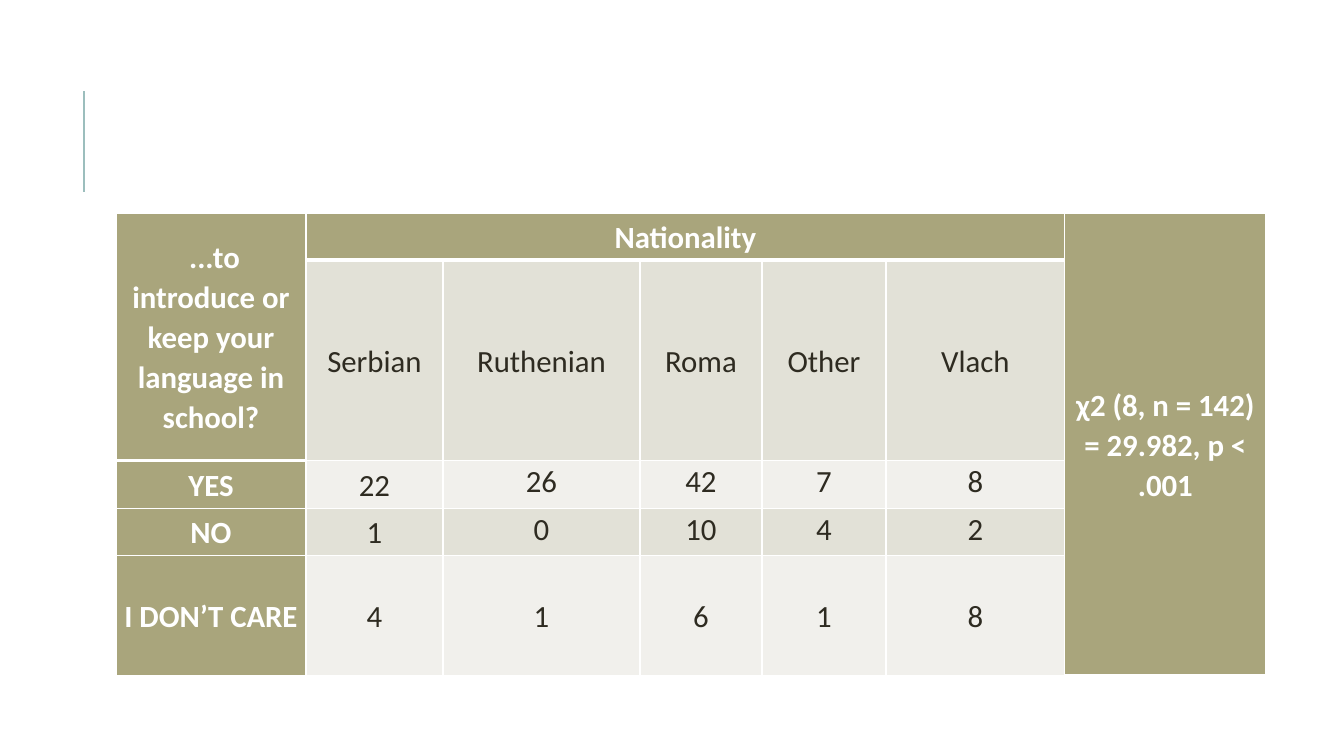
from lxml import etree
from pptx import Presentation
from pptx.dml.color import RGBColor
from pptx.enum.shapes import MSO_CONNECTOR
from pptx.enum.text import MSO_ANCHOR, PP_ALIGN
from pptx.oxml.ns import qn
from pptx.util import Pt

STRAIGHT = MSO_CONNECTOR.STRAIGHT
TOP, MIDDLE = MSO_ANCHOR.TOP, MSO_ANCHOR.MIDDLE
CENTER = PP_ALIGN.CENTER

WHITE = RGBColor(0xFF, 0xFF, 0xFF)
INK = RGBColor(0x2E, 0x2B, 0x21)
OLIVE = RGBColor(0xA9, 0xA5, 0x7C)
BAND_DARK = RGBColor(0xE2, 0xE1, 0xD7)
BAND_LIGHT = RGBColor(0xF1, 0xF0, 0xEC)
TEAL = RGBColor(0x9C, 0xBE, 0xBD)

FONT = "Calibri"
EMU_PER_PX = 914400 / 100.8
BLANK_LAYOUT = 6

COLUMN_WIDTHS = [190, 137, 197, 122, 124, 179, 201]
ROW_HEIGHTS = [47, 141, 48, 47, 91]
LAST_COLUMN = len(COLUMN_WIDTHS) - 1
LAST_ROW = len(ROW_HEIGHTS) - 1
QUESTION = "\u00a0...to introduce or keep your language in school?".replace("\u00a0", " ")
ROWS = [
    [QUESTION, "Nationality", "", "", "", "", "χ2 (8, n = 142) = 29.982, p < .001"],
    ["", "Serbian", "Ruthenian", "Roma", "Other", "Vlach", ""],
    ["YES", "22", "26", "42", "7", "8", ""],
    ["NO", "1", "0", "10", "4", "2", ""],
    ["I DON’T CARE", "4", "1", "6", "1", "8", ""],
]


def px(length):
    return round(length * EMU_PER_PX)


def add_rule(page, x, top, bottom, color, width):
    rule = page.shapes.add_connector(STRAIGHT, px(x), px(bottom), px(x), px(top))
    rule.line.color.rgb = color
    rule.line.width = Pt(width)
    etree.SubElement(rule._element.spPr, qn("a:effectLst"))


def set_borders(cell, color, **widths):
    properties = cell._tc.get_or_add_tcPr()
    for position, (side, width) in enumerate(widths.items()):
        border = etree.Element(qn(f"a:ln{side}"), w=str(Pt(width)))
        fill = etree.SubElement(border, qn("a:solidFill"))
        etree.SubElement(fill, qn("a:srgbClr"), val=str(color))
        properties.insert(position, border)


def write_cell(cell, text, *, fill, color, bold, anchor):
    cell.fill.solid()
    cell.fill.fore_color.rgb = fill
    cell.vertical_anchor = anchor
    cell.margin_left = cell.margin_right = px(7)
    cell.margin_top = cell.margin_bottom = 0
    para = cell.text_frame.paragraphs[0]
    para.alignment = CENTER
    para.line_spacing = 1.07
    para.font.size = Pt(22)
    if text:
        span = para.add_run()
        span.text = text
        span.font.name = FONT
        span.font.size = Pt(22)
        span.font.bold = bold
        span.font.color.rgb = color


def add_answer_table(page, left, top):
    frame = page.shapes.add_table(
        len(ROW_HEIGHTS), len(COLUMN_WIDTHS), px(left), px(top),
        px(sum(COLUMN_WIDTHS)), px(sum(ROW_HEIGHTS)))
    table = frame.table
    for column, width in zip(table.columns, COLUMN_WIDTHS):
        column.width = px(width)
    for row, height in zip(table.rows, ROW_HEIGHTS):
        row.height = px(height)

    table.cell(0, 0).merge(table.cell(1, 0))
    table.cell(0, 1).merge(table.cell(0, LAST_COLUMN - 1))
    table.cell(0, LAST_COLUMN).merge(table.cell(LAST_ROW, LAST_COLUMN))

    for r, texts in enumerate(ROWS):
        for c, text in enumerate(texts):
            heading = r == 0 or c in (0, LAST_COLUMN)
            band = BAND_DARK if r % 2 else BAND_LIGHT
            raised = r in (2, 3) and 1 < c < LAST_COLUMN
            cell = table.cell(r, c)
            write_cell(cell, text,
                       fill=OLIVE if heading else band,
                       color=WHITE if heading else INK,
                       bold=heading,
                       anchor=TOP if raised else MIDDLE)
            head_end = 1 if c == 0 else 0
            set_borders(cell, WHITE, L=1, R=1,
                        T=3 if r == head_end + 1 else 1,
                        B=3 if r <= head_end else 1)


def main():
    deck = Presentation()
    deck.slide_width, deck.slide_height = px(1344), px(756)
    page = deck.slides.add_slide(deck.slide_layouts[BLANK_LAYOUT])
    add_rule(page, 84, 91, 192, TEAL, 1.5)
    add_answer_table(page, 116, 213)
    deck.save("out.pptx")


if __name__ == "__main__":
    main()
